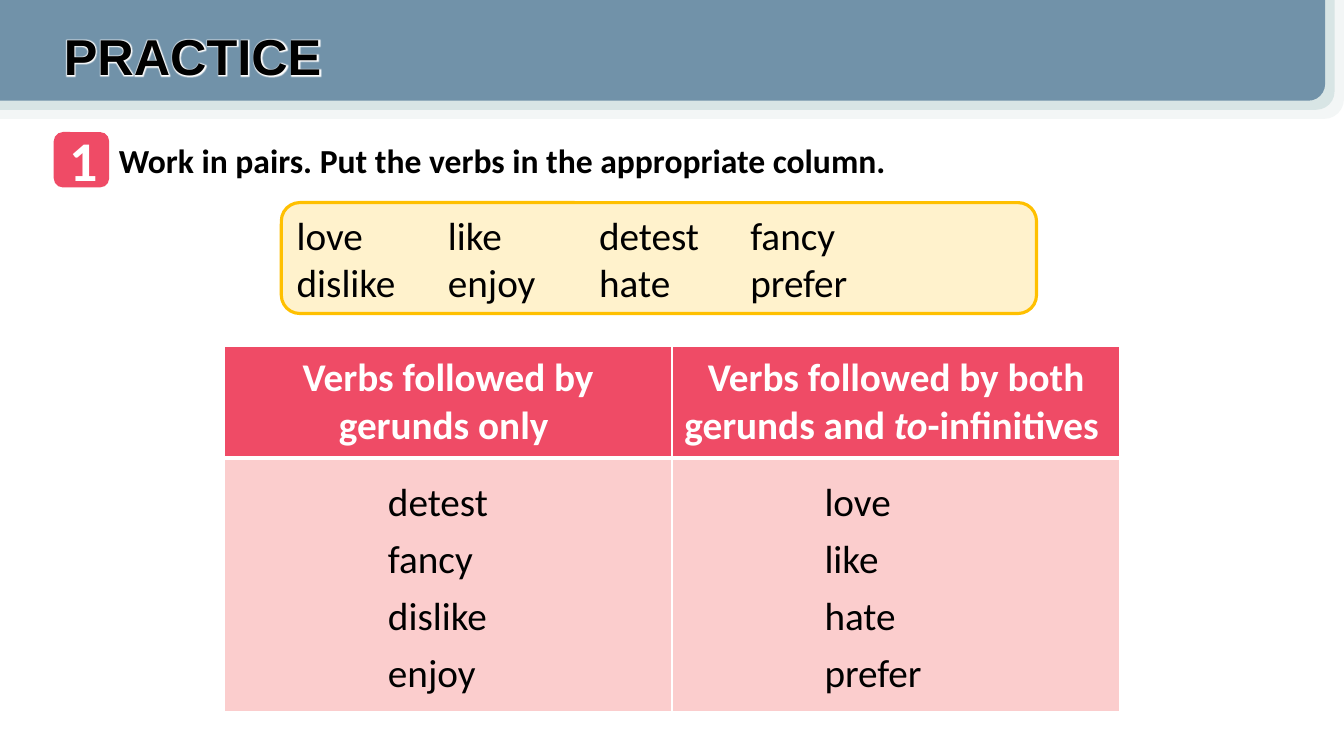
from dataclasses import dataclass

from lxml.etree import SubElement
from pptx import Presentation
from pptx.dml.color import RGBColor
from pptx.enum.shapes import MSO_SHAPE
from pptx.enum.text import MSO_ANCHOR, MSO_AUTO_SIZE, PP_ALIGN
from pptx.oxml import parse_xml
from pptx.oxml.ns import nsdecls, qn
from pptx.util import Inches, Pt


@dataclass(frozen=True)
class Theme:
    black: str = "000000"
    white: str = "FFFFFF"
    pink: str = "EF4B66"
    pale_pink: str = "FBCDCD"
    cream: str = "FFF2CC"
    gold: str = "FFC000"
    bands: tuple = ("F3F6F6", "D8E5E5", "7192A9")
    heading_font: str = "Arial"
    body_font: str = "Calibri"
    badge_size: int = 40
    title_size: int = 36
    body_size: int = 28
    instruction_size: int = 24


THEME = Theme()


def write_text(frame, text, size=THEME.body_size, color=THEME.black, font=THEME.body_font,
               bold=False, align=PP_ALIGN.LEFT, anchor=MSO_ANCHOR.TOP):
    """Write one paragraph per line; words between asterisks are italic."""
    frame.word_wrap = True
    frame.vertical_anchor = anchor
    for index, line in enumerate(text.split("\n")):
        paragraph = frame.paragraphs[0] if index == 0 else frame.add_paragraph()
        paragraph.alignment = align
        for position, part in enumerate(line.split("*")):
            run = paragraph.add_run()
            run.text = part
            run.font.size = Pt(size)
            run.font.name = font
            run.font.bold = bold
            run.font.italic = position % 2 == 1
            run.font.color.rgb = RGBColor.from_string(color)


class SlideBuilder:
    """Places elements by percent shares of the slide's width and height."""

    def __init__(self, presentation, theme):
        self.presentation = presentation
        self.theme = theme
        self.slide = presentation.slides.add_slide(presentation.slide_layouts[5])
        self.shapes = self.slide.shapes

    def box(self, left, top, width, height):
        across = self.presentation.slide_width / 100
        down = self.presentation.slide_height / 100
        return (round(left * across), round(top * down),
                round(width * across), round(height * down))

    def title(self, text, *place):
        title = self.shapes.title
        title.left, title.top, title.width, title.height = self.box(*place)
        title.text_frame.auto_size = MSO_AUTO_SIZE.NONE
        write_text(title.text_frame, text, size=self.theme.title_size,
                   font=self.theme.heading_font, bold=True)
        # White glow around the letters
        properties = title.text_frame.paragraphs[0].runs[0].font._element
        properties.find(qn("a:solidFill")).addnext(parse_xml(
            f'<a:effectLst {nsdecls("a")}><a:glow rad="38100">'
            f'<a:srgbClr val="{self.theme.white}"/></a:glow></a:effectLst>'))
        # Bring the title in front of the header bands
        self.shapes._spTree.append(title._element)

    def panel(self, kind, fill, *place, line=None):
        shape = self.shapes.add_shape(kind, *self.box(*place))
        shape.shadow.inherit = False
        shape.fill.solid()
        shape.fill.fore_color.rgb = RGBColor.from_string(fill)
        if line:
            shape.line.color.rgb = RGBColor.from_string(line)
            shape.line.width = Pt(2.25)
        else:
            shape.line.fill.background()
        return shape

    def text(self, text, *place, **text_format):
        text_box = self.shapes.add_textbox(*self.box(*place))
        write_text(text_box.text_frame, text, **text_format)

    def table(self, headings, row_shares, *place):
        rows = len(row_shares)
        table = self.shapes.add_table(rows, len(headings), *self.box(*place)).table
        for row, share in zip(table.rows, row_shares):
            row.height = self.box(0, 0, 0, share)[3]
        for column, heading in enumerate(headings):
            header, body = (table.cell(row, column) for row in range(rows))
            self.cell(header, self.theme.pink, bottom=3)
            self.cell(body, self.theme.pale_pink, top=3)
            write_text(header.text_frame, heading, color=self.theme.white, bold=True,
                       align=PP_ALIGN.CENTER)
            header.vertical_anchor = MSO_ANCHOR.MIDDLE

    def cell(self, cell, fill, top=1, bottom=1):
        properties = cell._tc.get_or_add_tcPr()
        for side, width in (("L", 1), ("R", 1), ("T", top), ("B", bottom)):
            border = SubElement(properties, qn(f"a:ln{side}"), w=str(Pt(width)))
            solid = SubElement(border, qn("a:solidFill"))
            SubElement(solid, qn("a:srgbClr"), val=self.theme.white)
        cell.fill.solid()
        cell.fill.fore_color.rgb = RGBColor.from_string(fill)


def main():
    presentation = Presentation()
    presentation.slide_width, presentation.slide_height = Inches(13.33), Inches(7.5)
    builder = SlideBuilder(presentation, THEME)

    # Header bands and title
    for index, color in enumerate(THEME.bands):
        band = builder.panel(MSO_SHAPE.ROUND_1_RECTANGLE, color,
                             0, 0, 100 - 0.7 * index, 15.73 - 1.2 * index)
        band._element.spPr.xfrm.set("flipV", "1")
    builder.title("PRACTICE", 4, 2.67, 33.9, 9.47)

    # Numbered instruction
    builder.text("Work in pairs. Put the verbs in the appropriate column.",
                 8.1, 17.87, 74.7, 6.67, size=THEME.instruction_size, bold=True)
    builder.panel(MSO_SHAPE.ROUNDED_RECTANGLE, THEME.pink, 4, 17.47, 4.13, 7.33)
    builder.text("1", 4.43, 16, 3.23, 10.27, size=THEME.badge_size, color=THEME.white,
                 bold=True, align=PP_ALIGN.CENTER)

    # Word bank
    word_rows = (("love", "like", "detest", "fancy"),
                 ("dislike", "enjoy", "hate", "prefer"))
    word_bank = builder.panel(MSO_SHAPE.ROUNDED_RECTANGLE, THEME.cream,
                              20.93, 26.8, 56.19, 14.67, line=THEME.gold)
    write_text(word_bank.text_frame, "\n".join("\t\t".join(row) for row in word_rows),
               anchor=MSO_ANCHOR.MIDDLE)

    # Table with the answers over its columns
    builder.table(("Verbs followed by gerunds only ",
                   "Verbs followed by both gerunds and *to*-infinitives "),
                  (14.67, 33.6), 16.67, 45.87, 66.67, 48.27)
    answers = (("detest", "fancy", "dislike", "enjoy"),
               ("love", "like", "hate", "prefer"))
    for column, verbs in enumerate(answers):
        for row, verb in enumerate(verbs):
            builder.text(verb, 28.13 + 32.48 * column, 62.53 + 7.53 * row, 17.5, 7.6)

    presentation.save("out.pptx")


if __name__ == "__main__":
    main()
